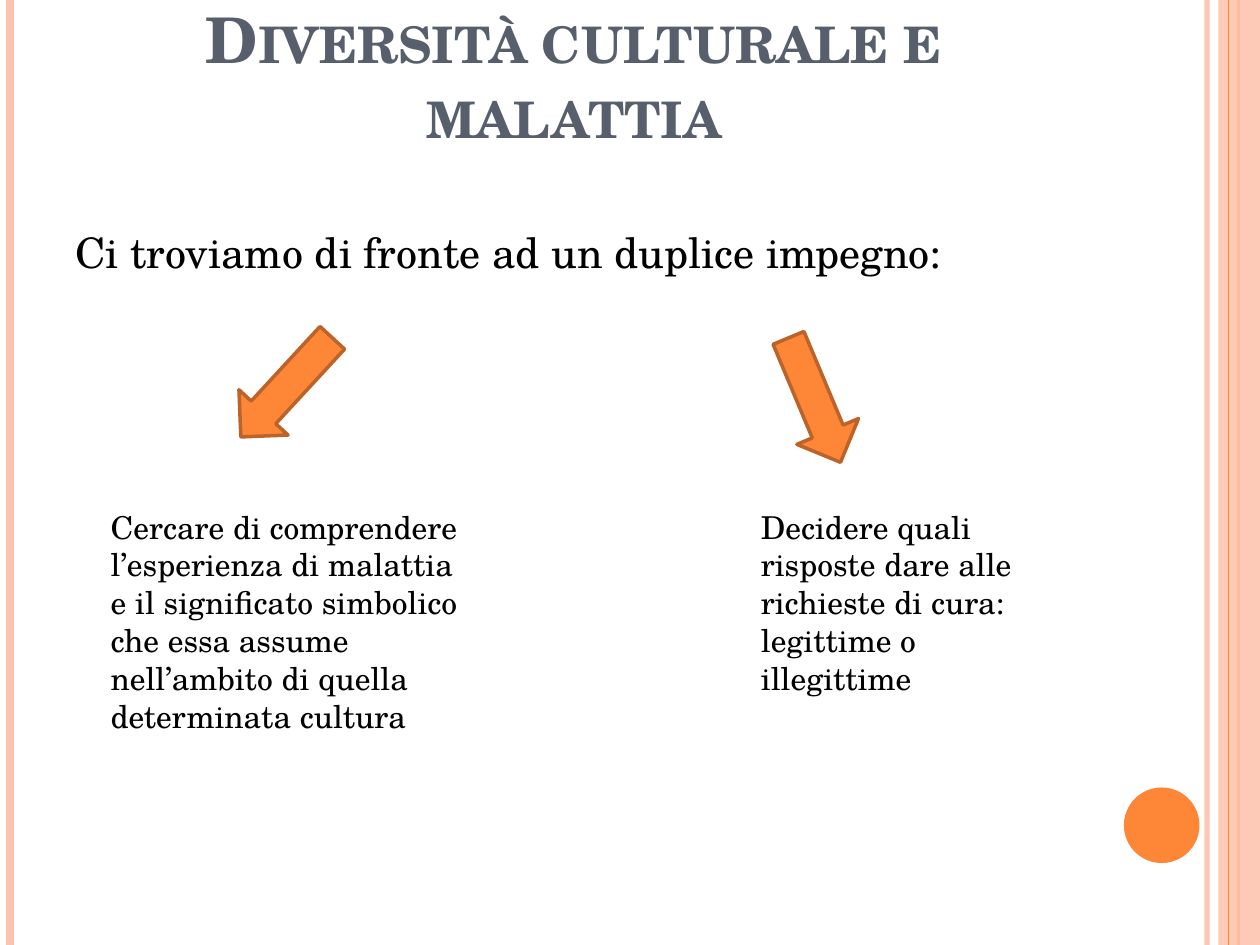
from lxml import etree
from pptx import Presentation
from pptx import util as u
from pptx.dml.color import RGBColor
from pptx.enum import shapes, text
from pptx.oxml.ns import qn

THEME = dict(
    font="TeX Gyre Schola",
    orange="FE8637", pale="FEC3AE", edge="BC6329", slate="575F6D", black="000000",
    title=36, lead=24, body=18,
)

# Content
TITLE = "Diversità culturale e malattia"
LEAD = "Ci troviamo di fronte ad un duplice impegno:"
TASKS = [  # text, text box, arrow place, arrow turn
    ("Cercare di comprendere l’esperienza di malattia e il significato simbolico "
     "che essa assume nell’ambito di quella determinata cultura",
     (0.78, 3.98, 2.97, 1.92), (2.01, 2.54), 42.7),
    ("Decidere quali risposte dare alle richieste di cura: legittime o illegittime",
     (5.94, 3.98, 2.19, 1.62), (6.2, 2.64), 337.3),
]
ARROW = (0.53, 1.07)

deck = Presentation()
deck.slide_width, deck.slide_height = u.Inches(10), u.Inches(7.5)
slide = deck.slides.add_slide(deck.slide_layouts[6])


def color(name):
    return RGBColor.from_string(THEME[name])


def fade(part, pct):
    """Set the opacity of the first solid colour in a shape's properties."""
    tone = next(part._element.spPr.iter(qn("a:srgbClr")))
    etree.SubElement(tone, qn("a:alpha")).set("val", str(pct * 1000))


def stripe(x, tone, width):
    line = slide.shapes.add_connector(
        shapes.MSO_CONNECTOR.STRAIGHT, u.Inches(x), 0, u.Inches(x), deck.slide_height)
    line.line.color.rgb = color(tone)
    line.line.width = u.Pt(width)
    etree.SubElement(line._element.spPr, qn("a:effectLst"))
    return line


def solid(kind, box, edge=None):
    part = slide.shapes.add_shape(kind, *map(u.Inches, box))
    part.shadow.inherit = False
    part.fill.solid()
    part.fill.fore_color.rgb = color("orange")
    if edge:
        part.line.color.rgb = color(edge)
        part.line.width = u.Pt(2)
    else:
        part.line.fill.background()
    return part


def write(words, box, size, tone="black"):
    frame = slide.shapes.add_textbox(*map(u.Inches, box)).text_frame
    frame.word_wrap = True
    frame.text = words
    para = frame.paragraphs[0]
    font = para.runs[0].font
    font.name, font.size = THEME["font"], u.Pt(THEME[size])
    font.color.rgb = color(tone)
    return frame, para


# Side stripes, band and disc
fade(stripe(9.58, "pale", 3), 93)
stripe(0.08, "pale", 4.5)
stripe(9.83, "orange", 1.5)
band = solid(shapes.MSO_SHAPE.RECTANGLE, (9.67, 0, 0.33, 7.5))
band.fill.fore_color.rgb = color("pale")
fade(band, 87)
stripe(9.75, "orange", 0.75)
solid(shapes.MSO_SHAPE.OVAL, (8.92, 6.25, 0.6, 0.6))

# Title in bold small capitals
frame, para = write(TITLE, (0.47, 0, 8.17, 1.25), "title", "slate")
frame.vertical_anchor = text.MSO_ANCHOR.BOTTOM
para.alignment = text.PP_ALIGN.CENTER
para.runs[0].font.bold = True
para.runs[0]._r.get_or_add_rPr().set("cap", "small")

# Lead sentence with a hanging indent
frame, para = write(LEAD, (0.5, 1.75, 8.17, 5.33), "lead")
para.space_before = u.Pt(6)
props = para._p.get_or_add_pPr()
props.set("marL", str(u.Inches(0.3)))
props.set("indent", str(u.Inches(-0.3)))

# The two tasks, each with its arrow
for words, box, place, turn in TASKS:
    arrow = solid(shapes.MSO_SHAPE.DOWN_ARROW, place + ARROW, "edge")
    arrow.rotation = turn
    frame, para = write(words, box, "body")
    frame.auto_size = text.MSO_AUTO_SIZE.SHAPE_TO_FIT_TEXT

deck.save("out.pptx")
